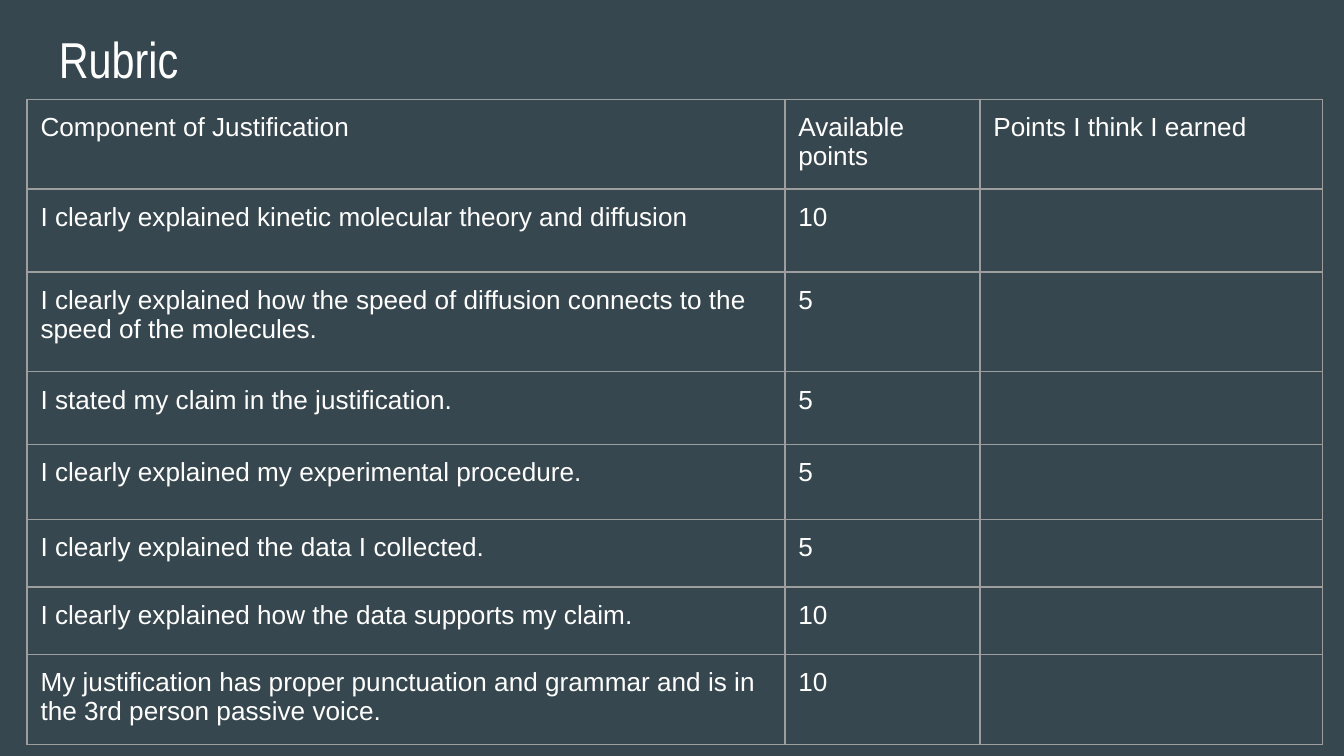
"""Build a rubric slide with a title and a scoring table."""
from lxml import etree
from pptx import Presentation
from pptx import util as u
from pptx.dml.color import RGBColor
from pptx.oxml import ns

Pt = u.Pt
hues = {"back": "37474F", "text": "FFFFFF", "line": "9E9E9E"}
wide = [406, 104.5, 183.5]
high = [47.5, 44.5, 53.5, 39, 40.2, 34.6, 34.4, 48.6]
rows = [
    ("Component of Justification", "Available points", "Points I think I earned"),
    ("I clearly explained kinetic molecular theory and diffusion", "10", ""),
    ("I clearly explained how the speed of diffusion connects to the speed of the molecules.", "5", ""),
    ("I stated my claim in the justification.", "5", ""),
    ("I clearly explained my experimental procedure.", "5", ""),
    ("I clearly explained the data I collected.", "5", ""),
    ("I clearly explained how the data supports my claim.", "10", ""),
    ("My justification has proper punctuation and grammar and is in the 3rd person passive voice.", "10", ""),
]


def write(frame, words, size, face):
    run = frame.paragraphs[0].add_run()
    run.text = words
    run.font.size = Pt(size)
    run.font.name = face
    run.font.color.rgb = RGBColor.from_string(hues["text"])


def inset(item):
    item.margin_left = item.margin_right = Pt(7.2)
    item.margin_top = item.margin_bottom = Pt(7.2)


deck = Presentation()
deck.slide_width, deck.slide_height = Pt(720), Pt(405)
slide = deck.slides.add_slide(deck.slide_layouts[6])
slide.background.fill.solid()
slide.background.fill.fore_color.rgb = RGBColor.from_string(hues["back"])

title = slide.shapes.add_textbox(Pt(24.5), Pt(8), Pt(671), Pt(45.3)).text_frame
title.word_wrap = True
inset(title)
write(title, "Rubric", 27, "Arial Narrow")

grid = slide.shapes.add_table(
    len(rows), len(wide), Pt(14.5), Pt(53.2), Pt(sum(wide)), Pt(sum(high))
).table
grid.horz_banding = False
grid.first_row = False
for col, size in zip(grid.columns, wide):
    col.width = Pt(size)
for row, size, words in zip(grid.rows, high, rows):
    row.height = Pt(size)
    for cell, word in zip(row.cells, words):
        inset(cell)
        write(cell.text_frame, word, 14, "Arial")
        props = cell._tc.get_or_add_tcPr()
        for side in ("lnL", "lnR", "lnT", "lnB"):
            edge = etree.SubElement(props, ns.qn("a:" + side), w=str(Pt(0.75)))
            fill = etree.SubElement(edge, ns.qn("a:solidFill"))
            etree.SubElement(fill, ns.qn("a:srgbClr"), val=hues["line"])
        cell.fill.background()

deck.save("out.pptx")
